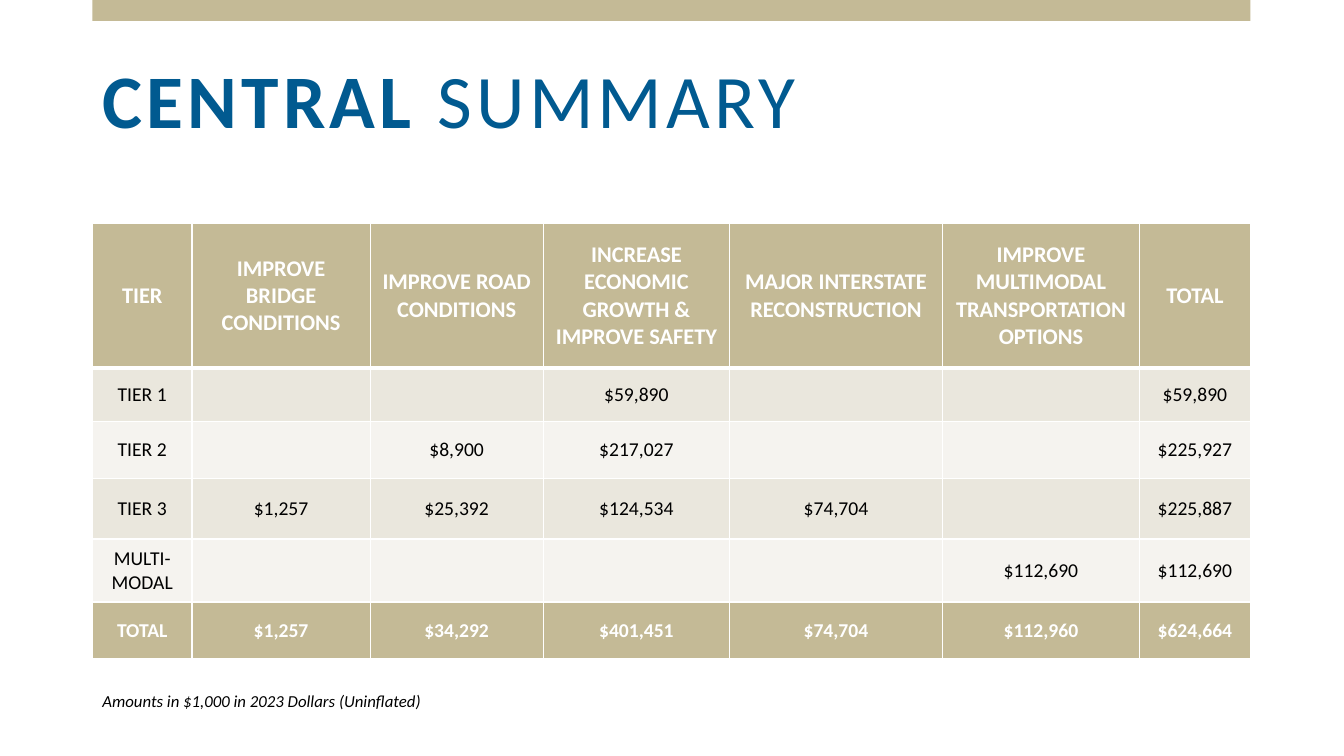
from dataclasses import dataclass

from lxml import etree
from pptx import Presentation
from pptx.dml.color import RGBColor
from pptx.enum.shapes import MSO_SHAPE
from pptx.enum.text import MSO_ANCHOR, MSO_AUTO_SIZE, PP_ALIGN
from pptx.oxml.ns import qn
from pptx.slide import Slide
from pptx.table import _Cell
from pptx.util import Cm, Pt

RECTANGLE = MSO_SHAPE.RECTANGLE
MIDDLE = MSO_ANCHOR.MIDDLE
NO_AUTOFIT = MSO_AUTO_SIZE.NONE
FIT_SHAPE = MSO_AUTO_SIZE.SHAPE_TO_FIT_TEXT
LEFT, CENTER = PP_ALIGN.LEFT, PP_ALIGN.CENTER
TITLE_ONLY = 5


@dataclass(frozen=True)
class Theme:
    font: str = "Calibri"
    tan: str = "C4BA96"
    tan_light: str = "EAE7DD"
    tan_pale: str = "F5F3EF"
    blue: str = "015A90"
    white: str = "FFFFFF"
    black: str = "000000"
    title_size: int = 54
    header_size: int = 16
    body_size: int = 14
    note_size: int = 12
    title_spacing: int = 3
    thin_border: int = 1
    thick_border: int = 3


@dataclass(frozen=True)
class RowStyle:
    fill: str
    color: str
    size: int
    bold: bool
    top: int = 1
    bottom: int = 1


@dataclass(frozen=True)
class TableRow:
    height: float
    style: RowStyle
    texts: tuple[str, ...]


THEME = Theme()
MARGIN, CONTENT_WIDTH = 2.33, 29.18
COLUMN_WIDTHS = (2.51, 4.49, 4.36, 4.7, 5.36, 4.97, 2.79)

HEADER = RowStyle(THEME.tan, THEME.white, THEME.header_size, True,
                  bottom=THEME.thick_border)
FIRST = RowStyle(THEME.tan_light, THEME.black, THEME.body_size, False,
                 top=THEME.thick_border)
ODD = RowStyle(THEME.tan_light, THEME.black, THEME.body_size, False)
EVEN = RowStyle(THEME.tan_pale, THEME.black, THEME.body_size, False)
TOTAL = RowStyle(THEME.tan, THEME.white, THEME.body_size, True)

ROWS = (
    TableRow(3.65, HEADER, (
        "TIER", "IMPROVE BRIDGE CONDITIONS", "IMPROVE ROAD CONDITIONS",
        "INCREASE ECONOMIC GROWTH & IMPROVE SAFETY",
        "MAJOR INTERSTATE RECONSTRUCTION",
        "IMPROVE MULTIMODAL TRANSPORTATION OPTIONS", "TOTAL")),
    TableRow(1.34, FIRST, ("TIER 1", "", "", "$59,890", "", "", "$59,890")),
    TableRow(1.43, EVEN, ("TIER 2", "", "$8,900", "$217,027", "", "", "$225,927")),
    TableRow(1.53, ODD, ("TIER 3", "$1,257", "$25,392", "$124,534", "$74,704", "",
                         "$225,887")),
    TableRow(1.59, EVEN, ("MULTI-MODAL", "", "", "", "", "$112,690", "$112,690")),
    TableRow(1.43, TOTAL, ("TOTAL", "$1,257", "$34,292", "$401,451", "$74,704",
                           "$112,960", "$624,664")),
)


def rgb(color: str) -> RGBColor:
    return RGBColor.from_string(color)


def add_top_band(slide: Slide) -> None:
    band = slide.shapes.add_shape(RECTANGLE, Cm(MARGIN), 0, Cm(CONTENT_WIDTH), Cm(0.53))
    band.shadow.inherit = False
    band.fill.solid()
    band.fill.fore_color.rgb = rgb(THEME.tan)
    band.line.fill.background()


def set_title(slide: Slide, bold_text: str, plain_text: str) -> None:
    title = slide.shapes.title
    title.left, title.top = Cm(MARGIN), Cm(0.81)
    title.width, title.height = Cm(CONTENT_WIDTH), Cm(3.63)
    frame = title.text_frame
    frame.auto_size = NO_AUTOFIT
    frame.vertical_anchor = MIDDLE
    paragraph = frame.paragraphs[0]
    paragraph.alignment = LEFT
    paragraph.line_spacing = 0.9
    paragraph.font.name = THEME.font
    paragraph.font.size = Pt(THEME.title_size)
    paragraph.font.color.rgb = rgb(THEME.blue)
    for text, bold in ((bold_text, True), (plain_text, False)):
        run = paragraph.add_run()
        run.text = text
        run.font.bold = bold
        # Letter spacing, in hundredths of a point
        run._r.get_or_add_rPr().set("spc", str(THEME.title_spacing * 100))


def set_borders(cell: _Cell, top: int, bottom: int) -> None:
    properties = cell._tc.get_or_add_tcPr()
    widths = {"a:lnL": THEME.thin_border, "a:lnR": THEME.thin_border,
              "a:lnT": top, "a:lnB": bottom}
    for tag, width in widths.items():
        line = etree.SubElement(properties, qn(tag), w=str(Pt(width)))
        fill = etree.SubElement(line, qn("a:solidFill"))
        etree.SubElement(fill, qn("a:srgbClr"), val=THEME.white)


def fill_cell(cell: _Cell, text: str, style: RowStyle) -> None:
    set_borders(cell, style.top, style.bottom)
    cell.fill.solid()
    cell.fill.fore_color.rgb = rgb(style.fill)
    cell.vertical_anchor = MIDDLE
    if text.startswith("$"):
        cell.margin_left = cell.margin_right = 0
        cell.margin_top = cell.margin_bottom = 0
    cell.text = text
    paragraph = cell.text_frame.paragraphs[0]
    paragraph.alignment = CENTER
    paragraph.font.name = THEME.font
    paragraph.font.size = Pt(style.size)
    paragraph.font.bold = style.bold
    paragraph.font.color.rgb = rgb(style.color)


def add_summary_table(slide: Slide) -> None:
    height = sum(row.height for row in ROWS)
    table = slide.shapes.add_table(len(ROWS), len(COLUMN_WIDTHS), Cm(MARGIN), Cm(5.63),
                                   Cm(CONTENT_WIDTH), Cm(height)).table
    for column, width in zip(table.columns, COLUMN_WIDTHS):
        column.width = Cm(width)
    for table_row, row in zip(table.rows, ROWS):
        table_row.height = Cm(row.height)
        for cell, text in zip(table_row.cells, row.texts):
            fill_cell(cell, text, row.style)


def add_note(slide: Slide, text: str) -> None:
    note = slide.shapes.add_textbox(Cm(MARGIN), Cm(17.27), Cm(13.61), Cm(0.76))
    frame = note.text_frame
    frame.word_wrap = True
    frame.auto_size = FIT_SHAPE
    paragraph = frame.paragraphs[0]
    paragraph.text = text
    paragraph.font.name = THEME.font
    paragraph.font.size = Pt(THEME.note_size)
    paragraph.font.italic = True
    paragraph.font.color.rgb = rgb(THEME.black)


def main() -> None:
    presentation = Presentation()
    presentation.slide_width, presentation.slide_height = Cm(33.87), Cm(19.05)
    slide = presentation.slides.add_slide(presentation.slide_layouts[TITLE_ONLY])

    # Heading
    add_top_band(slide)
    set_title(slide, "CENTRAL ", "SUMMARY")

    # Amounts by tier, with the unit below
    add_summary_table(slide)
    add_note(slide, "Amounts in $1,000 in 2023 Dollars (Uninflated)")

    presentation.save("out.pptx")


if __name__ == "__main__":
    main()
